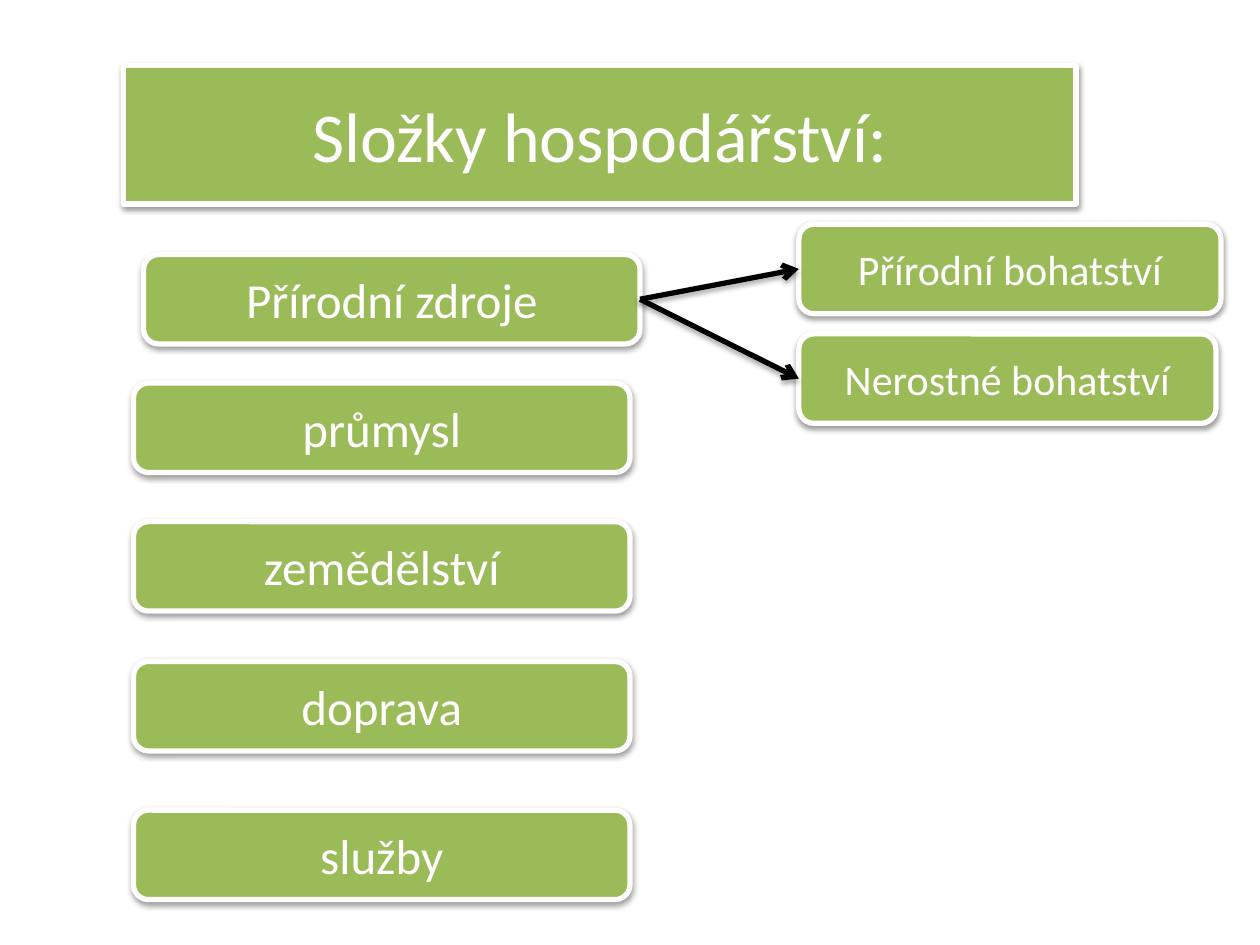
import pptx
import pptx.util
import pptx.dml.color
import pptx.enum.shapes
import pptx.enum.text
import pptx.oxml.ns
from dataclasses import dataclass
from lxml import etree


@dataclass(frozen=True)
class Theme:
    font: str = "Calibri"
    green: str = "9BBB59"
    white: str = "FFFFFF"
    black: str = "000000"
    title_size: int = 40
    branch_size: int = 28
    leaf_size: int = 24
    line_width: int = 3
    shadow_blur: float = 3.15


THEME = Theme()
CELL = 0.1  # inches: the slide is a grid of 100 columns by 75 rows
COLUMNS, ROWS = 100, 75
BOX_ROWS = 7.1
BRANCH_COLUMNS = 39.4
LEAF_LEFT = 63.4

# Branches: text, left column, top row
BRANCHES = [
    ("Přírodní zdroje", 11.4, 20.2),
    ("průmysl", 10.6, 30.4),
    ("zemědělství", 10.6, 41.4),
    ("doprava", 10.6, 52.5),
    ("služby", 10.6, 64.3),
]
# Leaves of the first branch: text, top row, columns wide
LEAVES = [
    ("Přírodní bohatství", 17.8, 33.5),
    ("Nerostné bohatství", 26.5, 33.1),
]


def grid(cells):
    return pptx.util.Inches(cells * CELL)


def color(code):
    return pptx.dml.color.RGBColor.from_string(code)


def add_element(parent, tag, **attributes):
    return etree.SubElement(parent, pptx.oxml.ns.qn(tag), attributes)


def add_shadow(item, distance, opacity):
    """Give a shape or connector a soft shadow straight below it."""
    effects = add_element(item._element.spPr, "a:effectLst")
    shadow = add_element(
        effects, "a:outerShdw",
        blurRad=str(pptx.util.Pt(THEME.shadow_blur)),
        dist=str(pptx.util.Pt(distance)),
        dir="5400000", rotWithShape="0")
    shade = add_element(shadow, "a:srgbClr", val=THEME.black)
    add_element(shade, "a:alpha", val=str(opacity * 1000))


def set_line(item, code):
    item.line.color.rgb = color(code)
    item.line.width = pptx.util.Pt(THEME.line_width)


def dress_box(box, text, size):
    """Apply the green look and the centred text."""
    box.fill.solid()
    box.fill.fore_color.rgb = color(THEME.green)
    set_line(box, THEME.white)
    add_shadow(box, 1.57, 38)
    frame = box.text_frame
    frame.word_wrap = True
    frame.vertical_anchor = pptx.enum.text.MSO_ANCHOR.MIDDLE
    para = frame.paragraphs[0]
    para.alignment = pptx.enum.text.PP_ALIGN.CENTER
    span = para.add_run()
    span.text = text
    span.font.name = THEME.font
    span.font.size = pptx.util.Pt(size)
    span.font.color.rgb = color(THEME.white)


def set_title(page, text, left, top, width, height):
    """Turn the title placeholder into a rounded box."""
    title = page.shapes.title
    title.left, title.top = grid(left), grid(top)
    title.width, title.height = grid(width), grid(height)
    outline = add_element(title._element.spPr, "a:prstGeom", prst="roundRect")
    add_element(outline, "a:avLst")
    dress_box(title, text, THEME.title_size)


def add_box(page, text, left, top, width, size):
    box = page.shapes.add_shape(
        pptx.enum.shapes.MSO_SHAPE.ROUNDED_RECTANGLE,
        grid(left), grid(top), grid(width), grid(BOX_ROWS))
    dress_box(box, text, size)
    return box


def add_arrow(page, source, target):
    """Join the right side of one box to the left side of another."""
    arrow = page.shapes.add_connector(
        pptx.enum.shapes.MSO_CONNECTOR.STRAIGHT, 0, 0, 0, 0)
    arrow.begin_connect(source, 3)
    arrow.end_connect(target, 1)
    set_line(arrow, THEME.black)
    add_element(arrow.line._get_or_add_ln(), "a:tailEnd", type="arrow")
    add_shadow(arrow, 1.81, 35)


def main():
    deck = pptx.Presentation()
    deck.slide_width, deck.slide_height = grid(COLUMNS), grid(ROWS)
    page = deck.slides.add_slide(deck.slide_layouts.get_by_name("Title Only"))

    # Heading
    set_title(page, "Složky hospodářství:", 9.8, 5.2, 75.6, 11)

    # Parts of the economy
    branches = [add_box(page, text, left, top, BRANCH_COLUMNS, THEME.branch_size)
                for text, left, top in BRANCHES]

    # Kinds of natural resources
    leaves = [add_box(page, text, LEAF_LEFT, top, width, THEME.leaf_size)
              for text, top, width in LEAVES]
    for leaf in leaves:
        add_arrow(page, branches[0], leaf)

    deck.save("out.pptx")


if __name__ == "__main__":
    main()
